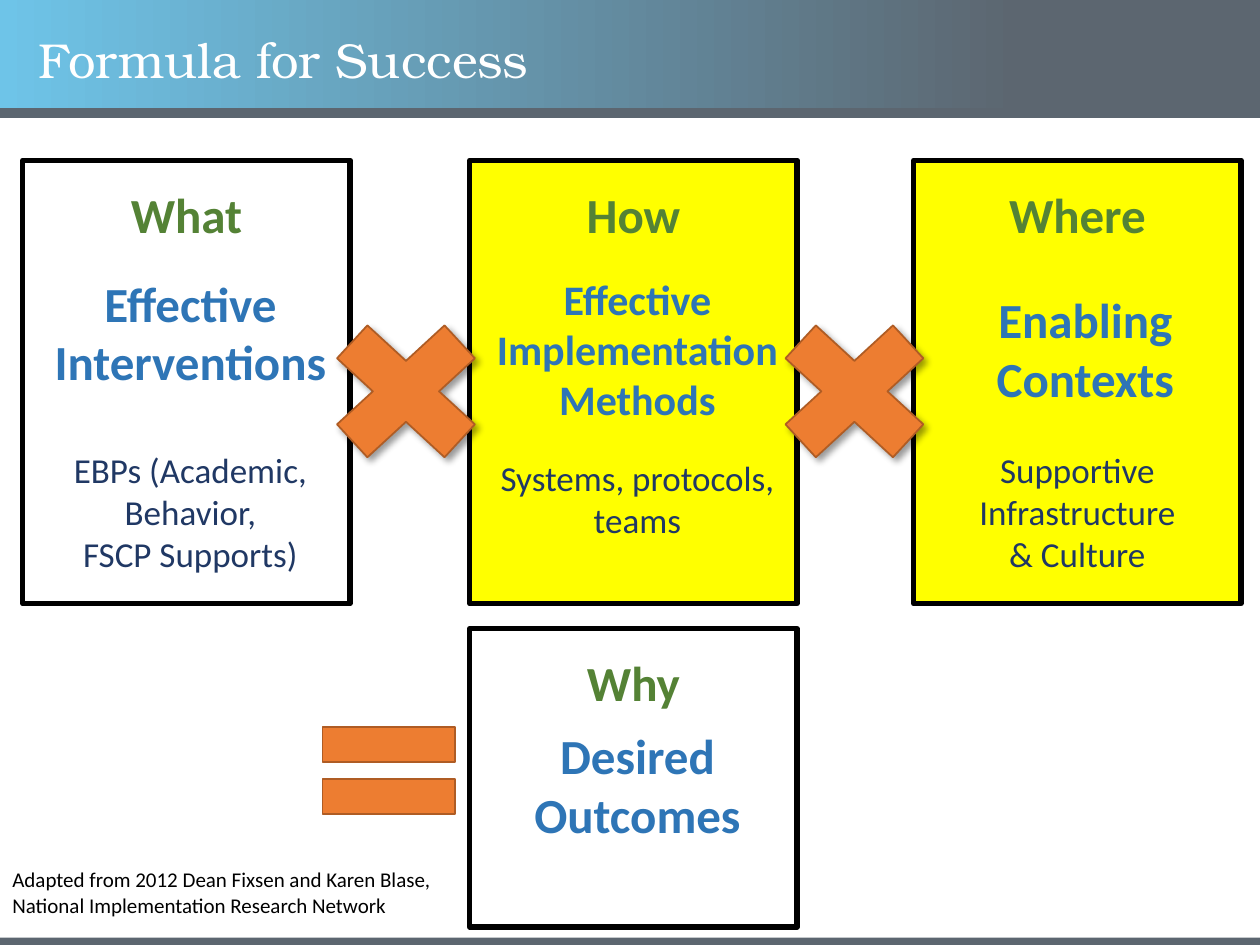
"""Build the Formula for Success slide."""
from dataclasses import dataclass

from lxml.etree import SubElement as Sub
from pptx import Presentation
from pptx.dml.color import RGBColor as Rgb
from pptx.enum.shapes import MSO_SHAPE as Kind
from pptx.enum.text import MSO_ANCHOR as Anchor, MSO_AUTO_SIZE as Auto, PP_ALIGN as Align
from pptx.oxml.ns import qn
from pptx.util import Cm, Pt


@dataclass(frozen=True)
class Theme:
    face: str = "Calibri"
    serif: str = "TeX Gyre Bonum"
    slate: str = "5C6670"
    sky: str = "6EC4E8"
    white: str = "FFFFFF"
    black: str = "000000"
    yellow: str = "FFFF00"
    green: str = "548235"
    blue: str = "2E75B6"
    navy: str = "203864"
    orange: str = "ED7D31"
    rust: str = "AF5C24"
    big: int = 28
    mid: int = 24
    small: int = 20
    note: int = 12


T = Theme()
WIDE, HIGH = 25.4, 19.05
TITLE = "Formula for Success"
NOTE = "Adapted from 2012 Dean Fixsen and Karen Blase,\vNational Implementation Research Network"
COLS, TOP, LOW = (0.46, 9.47, 18.42), 3.23, 12.67
BOX, TALL, SHORT, TEXT = 6.6, 8.94, 6.02, 6.76

CARDS = [
    dict(head="What", at=(COLS[0], TOP, TALL), fill=None,
         lead=("Effective Interventions", 0, 5.38, T.big),
         body=("EBPs (Academic, Behavior,\nFSCP Supports)", 0, 8.92)),
    dict(head="How", at=(COLS[1], TOP, TALL), fill=T.yellow,
         lead=("Effective Implementation Methods", 0, 5.38, T.mid),
         body=("Systems, protocols, teams", 0, 9.07)),
    dict(head="Where", at=(COLS[2], TOP, TALL), fill=T.yellow,
         lead=("Enabling Contexts", 0.08, 5.72, T.big),
         body=("Supportive Infrastructure\v& Culture", -0.08, 8.92)),
    dict(head="Why", at=(COLS[1], LOW, SHORT), fill=None,
         lead=("Desired\nOutcomes", 0, 14.5, T.big), body=None),
]
SIGNS = [
    (Kind.MATH_MULTIPLY, 6.1, 5.97, 4.17, 3.84, True),
    (Kind.MATH_MULTIPLY, 15.14, 5.97, 4.17, 3.84, True),
    (Kind.MATH_EQUAL, 6.02, 14.05, 3.63, 2.97, False),
]


def shape(slide, kind, x, y, w, h, fill=None, line=None, thick=1):
    item = slide.shapes.add_shape(kind, Cm(x), Cm(y), Cm(w), Cm(h))
    item.shadow.inherit = False
    if fill:
        item.fill.solid()
        item.fill.fore_color.rgb = Rgb.from_string(fill)
    else:
        item.fill.background()
    if line:
        item.line.color.rgb = Rgb.from_string(line)
        item.line.width = Pt(thick)
    else:
        item.line.fill.background()
    return item


def style(frame, size, tint, face=T.face, bold=False, align=Align.CENTER):
    for para in frame.paragraphs:
        para.alignment = align
        font = para.font
        font.name, font.size, font.bold = face, Pt(size), bold
        font.color.rgb = Rgb.from_string(tint)


def label(slide, text, x, y, w, h, size, tint, wrap=True, **look):
    frame = slide.shapes.add_textbox(Cm(x), Cm(y), Cm(w), Cm(h)).text_frame
    frame.word_wrap = wrap
    frame.auto_size = Auto.SHAPE_TO_FIT_TEXT
    frame.text = text
    style(frame, size, tint, **look)


def shade(item):
    glow = item.element.spPr.find(qn("a:effectLst"))
    drop = Sub(glow, qn("a:outerShdw"), blurRad=str(Pt(4)), dist=str(Pt(3)),
               dir="2700000", algn="tl", rotWithShape="0")
    tint = Sub(drop, qn("a:srgbClr"), val=T.black)
    Sub(tint, qn("a:alpha"), val="40000")


def banner(slide):
    band = shape(slide, Kind.RECTANGLE, 0, 0, WIDE, 2.21)
    band.fill.gradient()
    band.fill.gradient_angle = 0
    for stop, (tint, spot) in zip(band.fill.gradient_stops, [(T.sky, 0), (T.slate, 0.81)]):
        stop.color.rgb = Rgb.from_string(tint)
        stop.position = spot
    for y in (2.18, 18.9):
        shape(slide, Kind.RECTANGLE, 0, y, WIDE, 0.2, T.slate)


def card(slide, head, at, fill, lead, body):
    x, y, h = at
    shape(slide, Kind.RECTANGLE, x, y, BOX, h, fill, T.black, 3)
    label(slide, head, x - 0.08, y + 0.36, TEXT, 1.45, T.big, T.green, bold=True)
    text, dx, top, size = lead
    label(slide, text, x + dx, top, TEXT, 2.64, size, T.blue, bold=True)
    if body:
        text, dx, top = body
        label(slide, text, x + dx, top, TEXT, 2.82, T.small, T.navy)


def heading(slide):
    title = slide.shapes.title
    title.left, title.top, title.width, title.height = Cm(0.53), Cm(0.53), Cm(21.9), Cm(1.45)
    frame = title.text_frame
    frame.text = TITLE
    frame.vertical_anchor = Anchor.MIDDLE
    style(frame, T.big, T.white, face=T.serif, align=Align.LEFT)
    frame.paragraphs[0].line_spacing = 0.9
    title.element.getparent().append(title.element)


def main():
    deck = Presentation()
    deck.slide_width, deck.slide_height = Cm(WIDE), Cm(HIGH)
    slide = deck.slides.add_slide(deck.slide_layouts[5])
    banner(slide)
    for item in CARDS:
        card(slide, **item)
    for kind, x, y, w, h, deep in SIGNS:
        sign = shape(slide, kind, x, y, w, h, T.orange, T.rust)
        if deep:
            shade(sign)
    label(slide, NOTE, 0, 17.35, 9.04, 1.27, T.note, T.black, wrap=False, align=Align.LEFT)
    heading(slide)
    deck.save("out.pptx")


if __name__ == "__main__":
    main()
